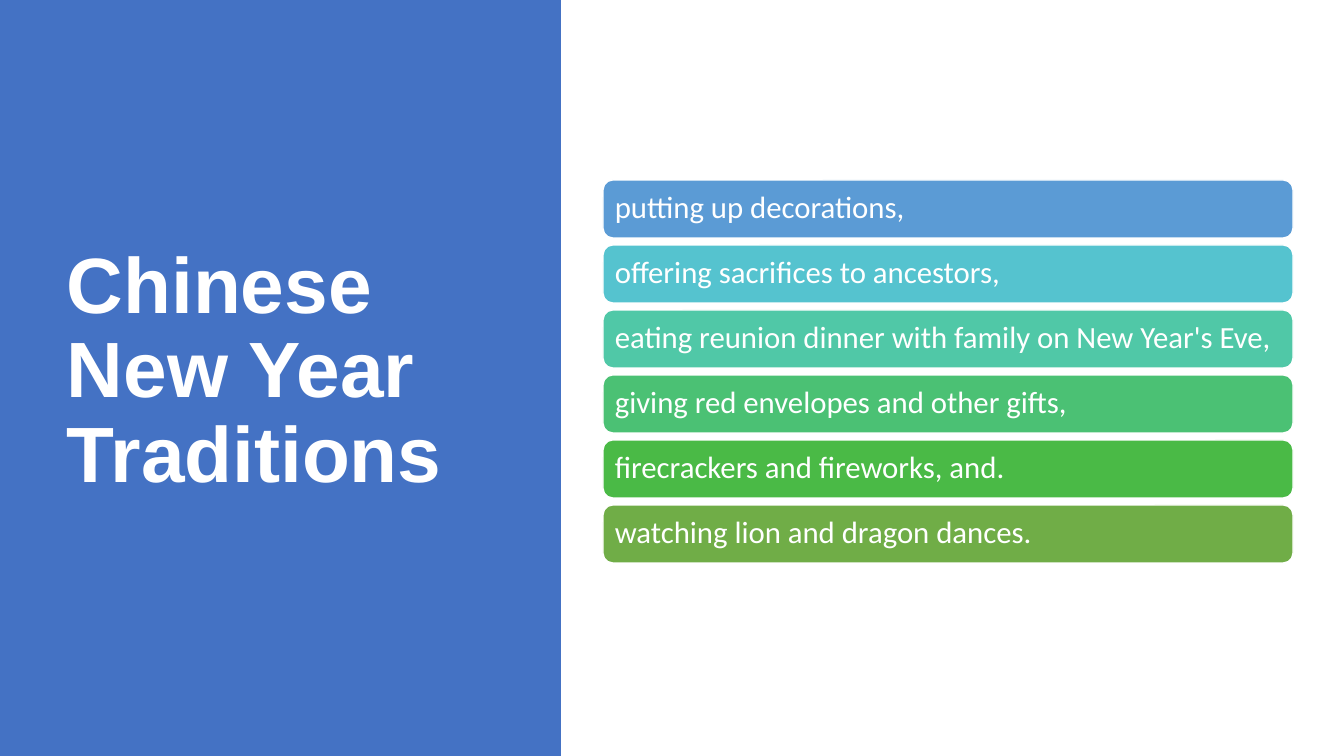
from pptx import Presentation
from pptx import util as u
from pptx.dml.color import RGBColor
from pptx.enum import shapes, text

PX = 914400 / 100.8  # EMU per px
WHITE = RGBColor(0xFF, 0xFF, 0xFF)
PANEL_BLUE = RGBColor(0x44, 0x72, 0xC4)
TRADITIONS = [
    ("putting up decorations,", RGBColor(0x5B, 0x9B, 0xD5)),
    ("offering sacrifices to ancestors,", RGBColor(0x55, 0xC3, 0xCF)),
    ("eating reunion dinner with family on New Year's Eve,", RGBColor(0x50, 0xC8, 0xA7)),
    ("giving red envelopes and other gifts,", RGBColor(0x4B, 0xC1, 0x74)),
    ("firecrackers and fireworks, and.", RGBColor(0x4A, 0xBA, 0x46)),
    ("watching lion and dragon dances.", RGBColor(0x70, 0xAD, 0x47)),
]
TITLE_FONT = {"name": "Arial", "size": u.Pt(56), "bold": True}
BAR_FONT = {"name": "Calibri", "size": u.Pt(22), "bold": False}


def px(*lengths):
    return [u.Emu(round(n * PX)) for n in lengths]


def write(sp, words, font, inset):
    tf = sp.text_frame
    tf.word_wrap = True
    tf.vertical_anchor = text.MSO_ANCHOR.MIDDLE
    for side in ("left", "top", "right", "bottom"):
        setattr(tf, f"margin_{side}", px(inset)[0])
    p = tf.paragraphs[0]
    p.alignment = text.PP_ALIGN.LEFT
    p.line_spacing = 0.9
    r = p.add_run()
    r.text = words
    for key, value in font.items():
        setattr(r.font, key, value)
    r.font.color.rgb = WHITE


prs = Presentation()
prs.slide_width, prs.slide_height = px(1344, 756)
s = prs.slides.add_slide(prs.slide_layouts[6])

# Blue panel
panel = s.shapes.add_shape(shapes.MSO_SHAPE.RECTANGLE, *px(0, 0, 561, 756))
panel.shadow.inherit = False
panel.fill.solid()
panel.fill.fore_color.rgb = PANEL_BLUE
panel.line.fill.background()

# Title
title = s.shapes.add_textbox(*px(57, 69, 419, 607))
write(title, "Chinese New Year Traditions", TITLE_FONT, 10)

# Tradition bars
for i, (words, color) in enumerate(TRADITIONS):
    bar = s.shapes.add_shape(shapes.MSO_SHAPE.ROUNDED_RECTANGLE,
                             *px(603, 180 + 65 * i, 690, 58))
    bar.shadow.inherit = False
    bar.fill.solid()
    bar.fill.fore_color.rgb = color
    bar.line.color.rgb = WHITE
    bar.line.width = u.Pt(1)
    write(bar, words, BAR_FONT, 9)

prs.save("out.pptx")
